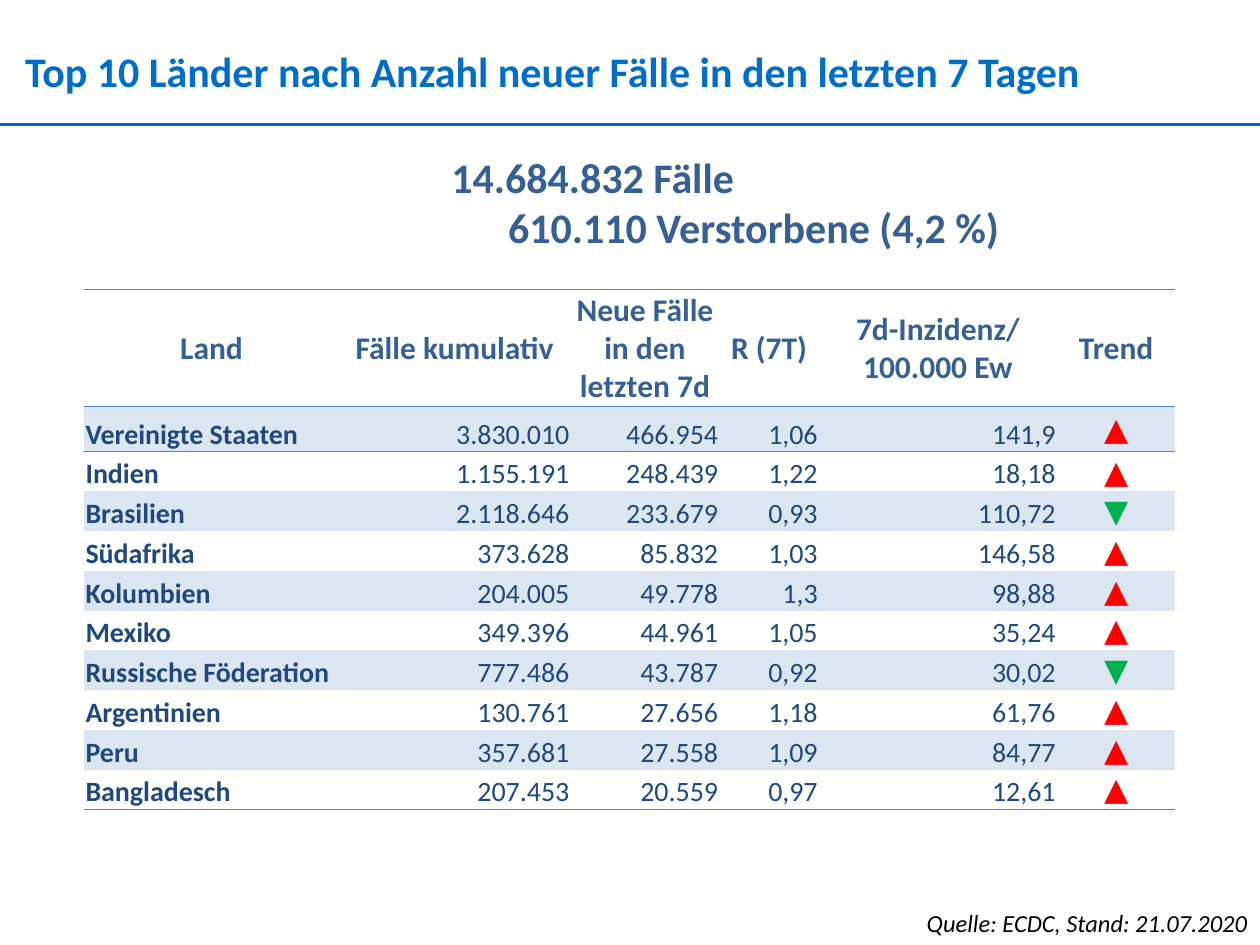
from lxml.etree import SubElement
from pptx import Presentation
from pptx.dml.color import RGBColor
from pptx.enum.shapes import MSO_CONNECTOR
from pptx.enum.text import MSO_ANCHOR, MSO_AUTO_SIZE, PP_ALIGN
from pptx.oxml.ns import qn
from pptx.util import Pt

TITLE_BLUE = RGBColor(0x00, 0x6E, 0xC7)
HEADING_BLUE = RGBColor(0x36, 0x60, 0x92)
BODY_BLUE = RGBColor(0x1F, 0x49, 0x7D)
BORDER_BLUE = RGBColor(0x4F, 0x81, 0xBD)
BAND_BLUE = RGBColor(0xDC, 0xE6, 0xF1)
RISING_RED = RGBColor(0xFF, 0x00, 0x00)
FALLING_GREEN = RGBColor(0x00, 0xB0, 0x50)
BLACK = RGBColor(0x00, 0x00, 0x00)

NO_STYLE_NO_GRID = "{2D5ABB26-0587-4C30-8999-92F81FD0307C}"
TOP, BOTTOM = "a:lnT", "a:lnB"

HEADERS = ["Land", "Fälle kumulativ", "Neue Fälle in den letzten 7d",
           "R (7T)", "7d-Inzidenz/ 100.000 Ew", "Trend"]
COUNTRIES = [
    ("Vereinigte Staaten", "3.830.010", "466.954", "1,06", "141,9", "▲"),
    ("Indien", "1.155.191", "248.439", "1,22", "18,18", "▲"),
    ("Brasilien", "2.118.646", "233.679", "0,93", "110,72", "▼"),
    ("Südafrika", "373.628", "85.832", "1,03", "146,58", "▲"),
    ("Kolumbien", "204.005", "49.778", "1,3", "98,88", "▲"),
    ("Mexiko", "349.396", "44.961", "1,05", "35,24", "▲"),
    ("Russische Föderation", "777.486", "43.787", "0,92", "30,02", "▼"),
    ("Argentinien", "130.761", "27.656", "1,18", "61,76", "▲"),
    ("Peru", "357.681", "27.558", "1,09", "84,77", "▲"),
    ("Bangladesch", "207.453", "20.559", "0,97", "12,61", "▲"),
]
COLUMN_WIDTHS = [145.4, 132.5, 85, 56.9, 136, 67.7]
ROW_HEIGHTS = [63.4, 25.9] + [19.6] * 9


class SlideBuilder:
    font = "Calibri"

    def __init__(self, slide):
        self.slide = slide

    def format(self, paragraph, size, color, bold=False, italic=False,
               align=PP_ALIGN.LEFT):
        paragraph.alignment = align
        for run in paragraph.runs:
            run.font.name = self.font
            run.font.size = Pt(size)
            run.font.color.rgb = color
            run.font.bold = bold
            run.font.italic = italic

    def text(self, box, text, size, color, wrap=True, margins=None, **style):
        frame = self.slide.shapes.add_textbox(*map(Pt, box)).text_frame
        frame.word_wrap = wrap
        frame.auto_size = MSO_AUTO_SIZE.SHAPE_TO_FIT_TEXT
        if margins is not None:
            frame.margin_left = frame.margin_right = Pt(margins)
            frame.margin_top = frame.margin_bottom = Pt(margins)
        frame.text = text
        for paragraph in frame.paragraphs:
            self.format(paragraph, size, color, **style)
        return frame

    def rule(self, x1, x2, y, color, width):
        line = self.slide.shapes.add_connector(
            MSO_CONNECTOR.STRAIGHT, Pt(x1), Pt(y), Pt(x2), Pt(y))
        line.line.color.rgb = color
        line.line.width = Pt(width)
        SubElement(line._element.spPr, qn("a:effectLst"))

    def table(self, left, top, widths, heights):
        frame = self.slide.shapes.add_table(
            len(heights), len(widths), Pt(left), Pt(top),
            Pt(sum(widths)), Pt(sum(heights)))
        table = frame.table
        table.first_row = table.horz_banding = False
        frame._element.find(".//" + qn("a:tableStyleId")).text = NO_STYLE_NO_GRID
        for column, width in zip(table.columns, widths):
            column.width = Pt(width)
        for row, height in zip(table.rows, heights):
            row.height = Pt(height)
        return table

    def cell(self, cell, text, size, color, anchor, borders, band, **style):
        cell.margin_left = cell.margin_right = cell.margin_top = Pt(0.72)
        cell.margin_bottom = Pt(0)
        cell.vertical_anchor = anchor
        cell.text_frame.text = text
        self.format(cell.text_frame.paragraphs[0], size, color, **style)
        # Borders come before the fill in the cell properties
        properties = cell._tc.get_or_add_tcPr()
        for side in borders:
            line = SubElement(properties, qn(side), w=str(Pt(0.5)))
            fill = SubElement(line, qn("a:solidFill"))
            SubElement(fill, qn("a:srgbClr"), val=str(BORDER_BLUE))
        if band:
            cell.fill.solid()
            cell.fill.fore_color.rgb = BAND_BLUE
        else:
            cell.fill.background()


def add_country_table(builder):
    table = builder.table(48.2, 165.6, COLUMN_WIDTHS, ROW_HEIGHTS)
    for col, header in enumerate(HEADERS):
        builder.cell(table.cell(0, col), header, 18, HEADING_BLUE,
                     MSO_ANCHOR.MIDDLE, (TOP, BOTTOM), False,
                     bold=True, align=PP_ALIGN.CENTER)

    for row, country in enumerate(COUNTRIES, start=1):
        borders = {1: (TOP,), len(COUNTRIES): (BOTTOM,)}.get(row, ())
        for col, value in enumerate(country):
            size, color, anchor = 16, BODY_BLUE, MSO_ANCHOR.BOTTOM
            align = PP_ALIGN.LEFT if col == 0 else PP_ALIGN.RIGHT
            if HEADERS[col] == "Trend":
                size, anchor, align = 18, MSO_ANCHOR.MIDDLE, PP_ALIGN.CENTER
                color = RISING_RED if value == "▲" else FALLING_GREEN
            builder.cell(table.cell(row, col), value, size, color, anchor,
                         borders, row % 2 == 1, bold=col == 0, align=align)


def main():
    presentation = Presentation()
    presentation.slide_width, presentation.slide_height = Pt(720), Pt(540)
    builder = SlideBuilder(
        presentation.slides.add_slide(presentation.slide_layouts[6]))

    # Countries
    add_country_table(builder)

    # Title and rule
    builder.text((14.4, 25.9, 693.4, 28.8),
                 "Top 10 Länder nach Anzahl neuer Fälle in den letzten 7 Tagen",
                 24, TITLE_BLUE, margins=0, bold=True)
    builder.rule(0, 720, 71.3, TITLE_BLUE, 1.5)

    # Worldwide totals
    totals = builder.text((250.8, 82.8, 330.5, 65.5),
                          "14.684.832 Fälle\n610.110 Verstorbene (4,2 %)",
                          24, HEADING_BLUE, wrap=False, bold=True)
    deaths = totals.paragraphs[1]
    deaths._p.get_or_add_pPr().set("marL", str(Pt(32.5)))

    # Source
    builder.text((465.1, 515.5, 254.9, 24.5), "Quelle: ECDC, Stand: 21.07.2020",
                 14, BLACK, italic=True, align=PP_ALIGN.RIGHT)

    presentation.save("out.pptx")


if __name__ == "__main__":
    main()
